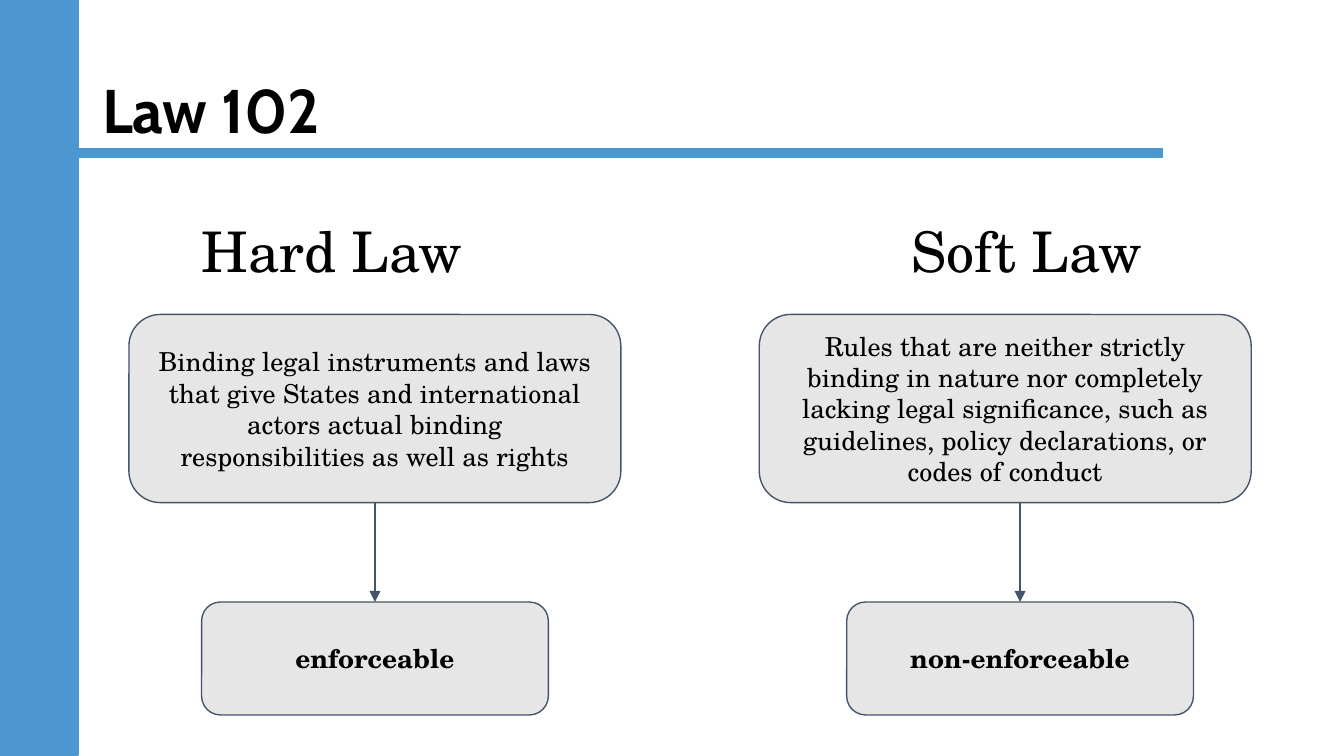
from lxml.etree import SubElement
from pptx import Presentation
from pptx.dml.color import RGBColor
from pptx.enum.shapes import MSO_CONNECTOR, MSO_SHAPE
from pptx.enum.text import MSO_ANCHOR, MSO_AUTO_SIZE, PP_ALIGN
from pptx.oxml.ns import qn
from pptx.util import Inches, Pt

BLUE = RGBColor(0x4C, 0x97, 0xD0)
GREY = RGBColor(0xE7, 0xE6, 0xE6)
SLATE = RGBColor(0x44, 0x54, 0x6A)
BLACK = RGBColor(0, 0, 0)
BODY_FONT = "TeX Gyre Schola"

BOX_TOP, BOX_WIDTH, BOX_HEIGHT = 2.34, 3.66, 1.4
OUTCOME_TOP, OUTCOME_WIDTH, OUTCOME_HEIGHT = 4.48, 2.58, 0.84
HEADING_CENTRES = [1.71, 6.88]  # from the left edge of the heading text

# definition, definition left, outcome, outcome left
COLUMNS = [
    ("Binding legal instruments and laws that give States and international "
     "actors actual binding responsibilities as well as rights", 0.96,
     "enforceable", 1.5),
    ("Rules that are neither strictly binding in nature nor completely lacking "
     "legal significance, such as guidelines, policy declarations, or codes of "
     "conduct", 5.65,
     "non-enforceable", 6.3),
]


def write(shape, text, size, bold=False, font=BODY_FONT, align=PP_ALIGN.CENTER,
          margins=(0.1, 0.1), anchor=MSO_ANCHOR.MIDDLE):
    """Fill a shape with one formatted paragraph and return the paragraph."""
    frame = shape.text_frame
    frame.word_wrap = True
    frame.auto_size = MSO_AUTO_SIZE.NONE
    frame.vertical_anchor = anchor
    frame.margin_left = frame.margin_right = Inches(margins[0])
    frame.margin_top = frame.margin_bottom = Inches(margins[1])
    paragraph = frame.paragraphs[0]
    paragraph.text = text
    paragraph.alignment = align
    paragraph.font.name = font
    paragraph.font.size = Pt(size)
    paragraph.font.bold = bold
    paragraph.font.color.rgb = BLACK
    return paragraph


def add_box(kind, left, top, width, height, fill, line, line_width):
    shape = slide.shapes.add_shape(
        kind, Inches(left), Inches(top), Inches(width), Inches(height))
    shape.shadow.inherit = False
    shape.fill.solid()
    shape.fill.fore_color.rgb = fill
    shape.line.color.rgb = line
    shape.line.width = Pt(line_width)
    return shape


presentation = Presentation()
presentation.slide_width = Inches(10)
presentation.slide_height = Inches(10) * 9 // 16
slide = presentation.slides.add_slide(presentation.slide_layouts[5])

title = slide.shapes.title
title.left, title.top = Inches(0.69), Inches(0.3)
title.width, title.height = Inches(8.62), Inches(1.09)
write(title, "Law 102", 33, True, "Cabin", PP_ALIGN.LEFT,
      (0.07, 0.04)).line_spacing = 0.9

# Both headings share a line, each centred on its own tab stop
headings = slide.shapes.add_textbox(
    Inches(0.69), Inches(1.5), Inches(8.62), Inches(0.84))
paragraph = write(headings, "\tHard Law\tSoft Law", 30, align=PP_ALIGN.LEFT,
                  margins=(0.07, 0.04), anchor=MSO_ANCHOR.TOP)
paragraph.line_spacing = 1.15
properties = paragraph._p.get_or_add_pPr()
tab_stops = properties.makeelement(qn("a:tabLst"))
properties.find(qn("a:defRPr")).addprevious(tab_stops)
for centre in HEADING_CENTRES:
    SubElement(tab_stops, qn("a:tab"), pos=str(Inches(centre)), algn="ctr")

# Side band and title rule
for left, top, width, height in [(0, 0, 0.58, 5.62), (0, 1.11, 8.65, 0.06)]:
    add_box(MSO_SHAPE.RECTANGLE, left, top, width, height, BLUE, BLUE, 1)

for definition, box_left, outcome, outcome_left in COLUMNS:
    definition_box = add_box(MSO_SHAPE.ROUNDED_RECTANGLE, box_left, BOX_TOP,
                             BOX_WIDTH, BOX_HEIGHT, GREY, SLATE, 0.75)
    write(definition_box, definition, 14)
    outcome_box = add_box(MSO_SHAPE.ROUNDED_RECTANGLE, outcome_left, OUTCOME_TOP,
                          OUTCOME_WIDTH, OUTCOME_HEIGHT, GREY, SLATE, 0.75)
    write(outcome_box, outcome, 14, bold=True)

    arrow_x = Inches(outcome_left + OUTCOME_WIDTH / 2)
    arrow = slide.shapes.add_connector(
        MSO_CONNECTOR.STRAIGHT, arrow_x, Inches(BOX_TOP + BOX_HEIGHT),
        arrow_x, Inches(OUTCOME_TOP))
    # The right arrow starts slightly off the middle of its definition box
    if abs(box_left + BOX_WIDTH / 2 - outcome_left - OUTCOME_WIDTH / 2) < 0.01:
        arrow.begin_connect(definition_box, 2)
    arrow.end_connect(outcome_box, 0)
    arrow.line.color.rgb = SLATE
    arrow.line.width = Pt(0.75)
    properties = arrow._element.spPr
    SubElement(properties.find(qn("a:ln")), qn("a:tailEnd"), type="triangle")
    SubElement(properties, qn("a:effectLst"))

presentation.save("out.pptx")
